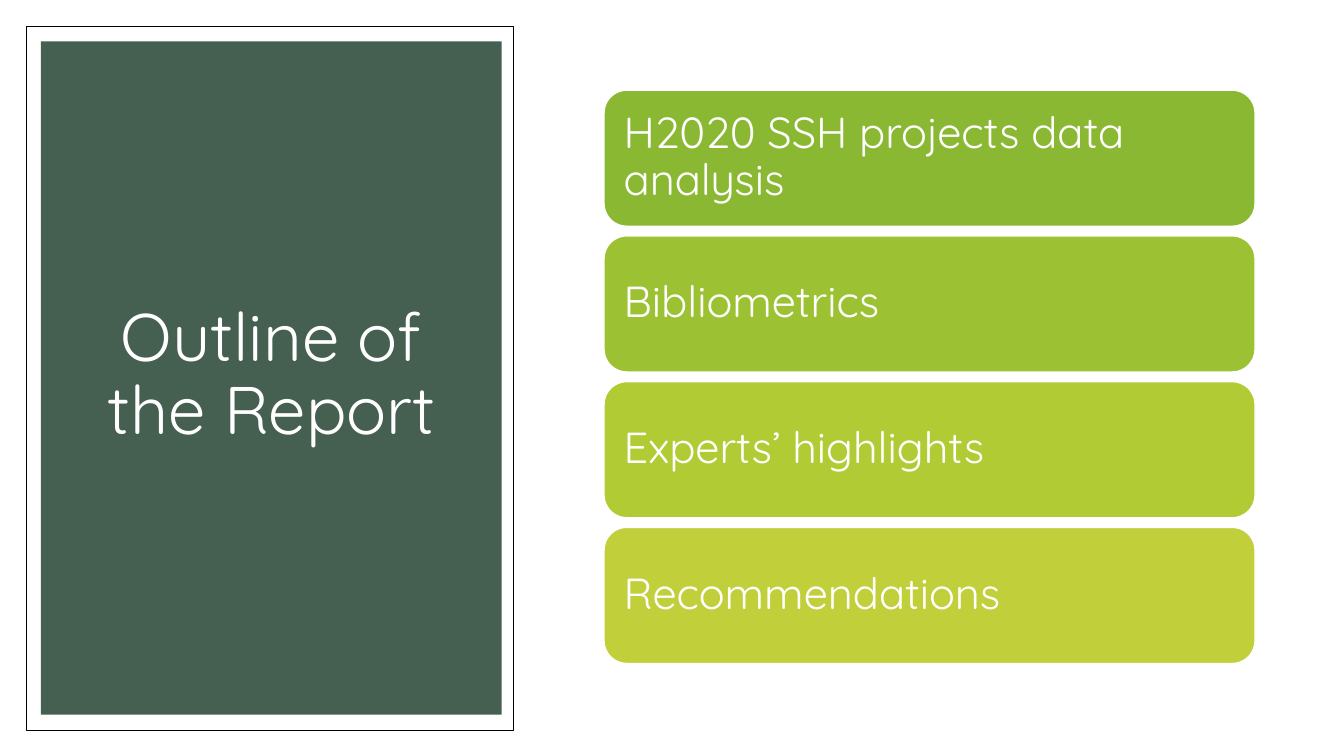
"""Build the report outline slide: a framed title panel beside four topic bars."""
import pptx
import pptx.dml.color
import pptx.enum.shapes
import pptx.enum.text
import pptx.util

Pt = pptx.util.Pt
Shape = pptx.enum.shapes.MSO_SHAPE
Align = pptx.enum.text.PP_ALIGN

COLOURS = {
    "white": "FFFFFF",
    "black": "000000",
    "panel": "455F51",
    "leaf": "8AB833",
    "grass": "9CC233",
    "lime": "B0CB34",
    "citron": "C0CF3A",
}
TOPICS = [
    ("H2020 SSH projects data analysis", "leaf"),
    ("Bibliometrics", "grass"),
    ("Experts’ highlights", "lime"),
    ("Recommendations", "citron"),
]
BAR_LEFT, BAR_TOP, BAR_WIDTH, BAR_HEIGHT = 431.5, 64.4, 465, 97.2
BAR_STEP = 104.1


def add_block(page, kind, bounds, fill, line=None, line_width=0):
    block = page.shapes.add_shape(kind, *map(Pt, bounds))
    block.shadow.inherit = False
    block.fill.solid()
    block.fill.fore_color.rgb = pptx.dml.color.RGBColor.from_string(COLOURS[fill])
    if line:
        block.line.color.rgb = pptx.dml.color.RGBColor.from_string(COLOURS[line])
        block.line.width = Pt(line_width)
    else:
        block.line.fill.background()
    return block


def write_text(shape, text, size, align):
    frame = shape.text_frame
    frame.word_wrap = True
    frame.vertical_anchor = pptx.enum.text.MSO_ANCHOR.MIDDLE
    para = frame.paragraphs[0]
    para.alignment = align
    para.line_spacing = 0.9
    span = para.add_run()
    span.text = text
    span.font.name = "Quicksand"
    span.font.size = Pt(size)
    span.font.color.rgb = pptx.dml.color.RGBColor.from_string(COLOURS["white"])
    return frame


deck = pptx.Presentation()
deck.slide_width, deck.slide_height = Pt(960), Pt(540)
page = deck.slides.add_slide(deck.slide_layouts[6])
page.background.fill.solid()
page.background.fill.fore_color.rgb = pptx.dml.color.RGBColor.from_string(COLOURS["white"])

add_block(page, Shape.RECTANGLE, (19, 19, 348, 502.5), "white", "black", 0.5)
add_block(page, Shape.RECTANGLE, (29.3, 29.5, 329, 481), "panel")
title = page.shapes.add_textbox(Pt(45.3), Pt(53.3), Pt(297), Pt(431))
write_text(title, "Outline of the Report", 48, Align.CENTER)

for index, (topic, colour) in enumerate(TOPICS):
    bounds = (BAR_LEFT, BAR_TOP + index * BAR_STEP, BAR_WIDTH, BAR_HEIGHT)
    bar = add_block(page, Shape.ROUNDED_RECTANGLE, bounds, colour, "white", 1)
    frame = write_text(bar, topic, 31, Align.LEFT)
    frame.margin_left = frame.margin_right = Pt(9.3)
    frame.margin_top = frame.margin_bottom = Pt(9.3)

deck.save("out.pptx")
